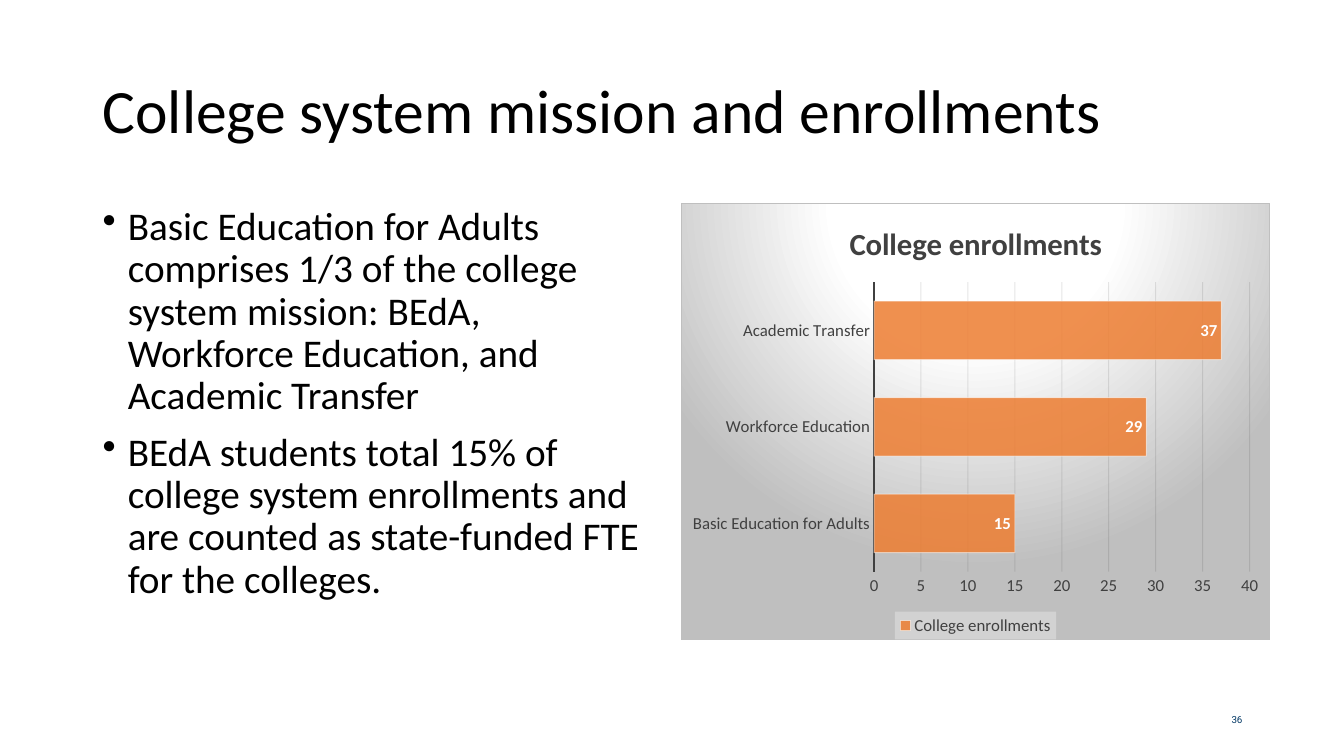
from dataclasses import dataclass

import lxml.etree
import pptx
import pptx.chart.data
import pptx.dml.color
import pptx.enum.chart
import pptx.enum.text
import pptx.oxml
import pptx.oxml.ns
import pptx.util

NS = 'xmlns:a="http://schemas.openxmlformats.org/drawingml/2006/main" ' \
     'xmlns:c="http://schemas.openxmlformats.org/drawingml/2006/chart"'
WIDTH, HEIGHT = pptx.util.Inches(13.33), pptx.util.Inches(7.5)


@dataclass(frozen=True)
class Theme:
    font: str = "Calibri"
    number_font: str = "Roboto"
    ink: str = "000000"
    muted: str = "404040"
    number: str = "003764"
    bar: str = "ED7D31"
    grid: str = "0D0D0D"
    light: str = "FFFFFF"
    shade: str = "BFBFBF"
    legend_fill: str = "F2F2F2"
    title_size: float = 44
    body_size: float = 28
    chart_title_size: float = 22
    label_size: float = 12
    number_size: float = 7


THEME = Theme()


def rgb(value):
    return pptx.dml.color.RGBColor.from_string(value)


def share_box(left, top, width, height):
    return [round(part * side) for part, side in
            zip((left, top, width, height), (WIDTH, HEIGHT) * 2)]


def style(font, size, color, name=THEME.font, bold=False):
    font.size = pptx.util.Pt(size)
    font.name = name
    font.bold = bold
    font.color.rgb = rgb(color)


def set_line(line, color, width):
    line.color.rgb = rgb(color)
    line.width = pptx.util.Pt(width)


def set_alpha(colors, percent):
    for color in colors:
        alpha = lxml.etree.SubElement(color, pptx.oxml.ns.qn("a:alpha"))
        alpha.set("val", str(percent * 1000))


def add_text(slide, box, lines, size, color, name=THEME.font,
             anchor=pptx.enum.text.MSO_ANCHOR.TOP):
    frame = slide.shapes.add_textbox(*box).text_frame
    frame.word_wrap = True
    frame.vertical_anchor = anchor
    frame.text = "\n".join(lines)
    for paragraph in frame.paragraphs:
        style(paragraph.font, size, color, name)
        paragraph.line_spacing = 0.9
    return frame.paragraphs


def add_title(slide, box, title):
    add_text(slide, box, [title], THEME.title_size, THEME.ink,
             anchor=pptx.enum.text.MSO_ANCHOR.MIDDLE)


def add_bullets(slide, box, points):
    indent = pptx.util.Inches(0.25)
    for paragraph in add_text(slide, box, points, THEME.body_size, THEME.ink):
        paragraph.space_before = pptx.util.Pt(10)
        properties = paragraph._p.get_or_add_pPr()
        properties.set("marL", str(indent))
        properties.set("indent", str(-indent))
        bullet = pptx.oxml.parse_xml(f'<a:buChar {NS} char="•"/>')
        properties.insert_element_before(bullet, "a:tabLst", "a:defRPr", "a:extLst")


def add_page_number(slide, box, number):
    paragraph, = add_text(slide, box, [number], THEME.number_size, THEME.number,
                          THEME.number_font, pptx.enum.text.MSO_ANCHOR.MIDDLE)
    paragraph.alignment = pptx.enum.text.PP_ALIGN.RIGHT
    paragraph.space_after = pptx.util.Pt(6)


def shade_chart_area(chart):
    stops = "".join(
        f'<a:gs pos="{position * 1000}"><a:srgbClr val="{color}"/></a:gs>'
        for position, color in ((0, THEME.light), (39, THEME.light), (100, THEME.shade)))
    area = pptx.oxml.parse_xml(
        f'<c:spPr {NS}><a:gradFill><a:gsLst>{stops}</a:gsLst><a:path path="circle">'
        '<a:fillToRect l="50000" t="-80000" r="50000" b="180000"/></a:path></a:gradFill>'
        f'<a:ln w="{pptx.util.Pt(0.75)}"><a:solidFill><a:srgbClr val="{THEME.shade}"/>'
        '</a:solidFill></a:ln></c:spPr>')
    chart._chartSpace.find(pptx.oxml.ns.qn("c:chart")).addnext(area)


def format_axes(chart):
    none = pptx.enum.chart.XL_TICK_MARK.NONE
    for axis in (chart.category_axis, chart.value_axis):
        axis.major_tick_mark = axis.minor_tick_mark = none
        style(axis.tick_labels.font, THEME.label_size, THEME.muted)
    set_line(chart.category_axis.format.line, THEME.muted, 1.5)
    values = chart.value_axis
    values.minimum_scale, values.maximum_scale, values.major_unit = 0, 40, 5
    values.format.line.fill.background()
    values.has_major_gridlines = True
    set_line(values.major_gridlines.format.line, THEME.grid, 0.75)
    set_alpha(values._element.xpath("c:majorGridlines//a:srgbClr"), 10)


def format_bars(chart):
    chart.plots[0].gap_width = 65
    chart.plots[0].vary_by_categories = False
    bars = chart.plots[0].series[0]
    bars.format.fill.solid()
    bars.format.fill.fore_color.rgb = rgb(THEME.bar)
    set_line(bars.format.line, THEME.light, 0.75)
    set_alpha(bars._element.xpath("c:spPr/a:solidFill/a:srgbClr"), 85)
    set_alpha(bars._element.xpath("c:spPr/a:ln//a:srgbClr"), 50)
    labels = bars.data_labels
    labels.show_value = True
    labels.position = pptx.enum.chart.XL_LABEL_POSITION.INSIDE_END
    style(labels.font, THEME.label_size, THEME.light, bold=True)


def format_legend(chart):
    chart.has_legend = True
    legend = chart.legend
    legend.position = pptx.enum.chart.XL_LEGEND_POSITION.BOTTOM
    legend.include_in_layout = False
    style(legend.font, THEME.label_size, THEME.muted)
    backing = pptx.oxml.parse_xml(
        f'<c:spPr {NS}><a:solidFill><a:srgbClr val="{THEME.legend_fill}">'
        '<a:alpha val="39000"/></a:srgbClr></a:solidFill></c:spPr>')
    legend._element.find(pptx.oxml.ns.qn("c:txPr")).addprevious(backing)


def add_enrollment_chart(slide, box, title, enrollments):
    data = pptx.chart.data.CategoryChartData()
    data.categories = list(enrollments)
    data.add_series(title, list(enrollments.values()))
    chart = slide.shapes.add_chart(
        pptx.enum.chart.XL_CHART_TYPE.BAR_CLUSTERED, *box, data).chart
    style(chart.font, 10, THEME.ink)
    chart.has_title = True
    chart.chart_title.include_in_layout = False
    chart.chart_title.text_frame.text = title
    style(chart.chart_title.text_frame.paragraphs[0].font,
          THEME.chart_title_size, THEME.muted, bold=True)
    format_axes(chart)
    format_bars(chart)
    format_legend(chart)
    shade_chart_area(chart)


def main():
    deck = pptx.Presentation()
    deck.slide_width, deck.slide_height = WIDTH, HEIGHT
    slide = deck.slides.add_slide(deck.slide_layouts[6])
    add_title(slide, share_box(0.069, 0.0533, 0.8627, 0.1933),
              "College system mission and enrollments")
    add_bullets(slide, share_box(0.069, 0.2667, 0.4254, 0.6347), [
        "Basic Education for Adults comprises 1/3 of the college system mission: "
        "BEdA, Workforce Education, and Academic Transfer",
        "BEdA students total 15% of college system enrollments and are counted "
        "as state-funded FTE for the colleges."])
    add_page_number(slide, share_box(0.7067, 0.9267, 0.2251, 0.0533), "36")
    add_enrollment_chart(slide, share_box(0.5064, 0.268, 0.4389, 0.5787),
                         "College enrollments",
                         {"Basic Education for Adults": 15,
                          "Workforce Education": 29,
                          "Academic Transfer": 37})
    deck.save("out.pptx")


if __name__ == "__main__":
    main()
